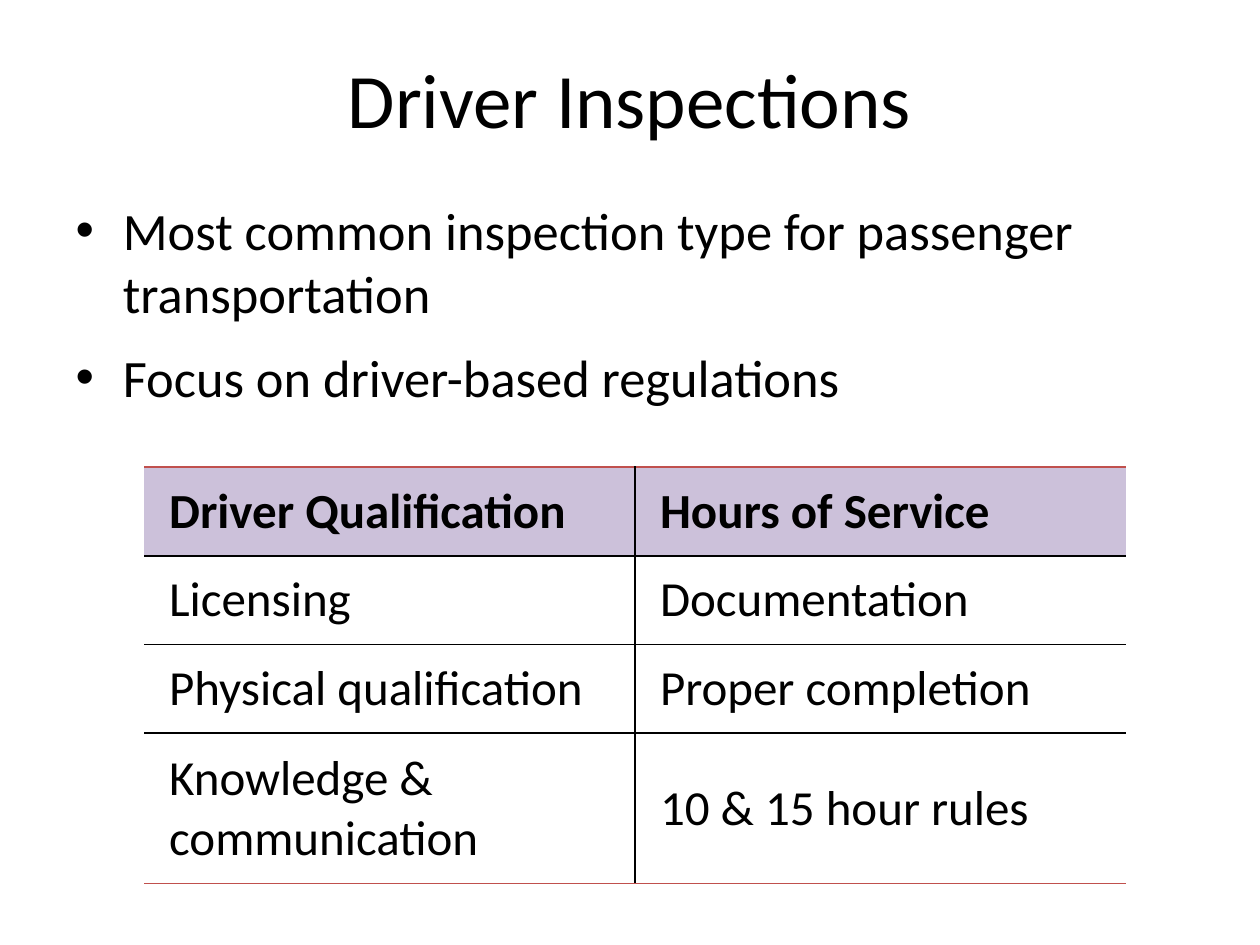
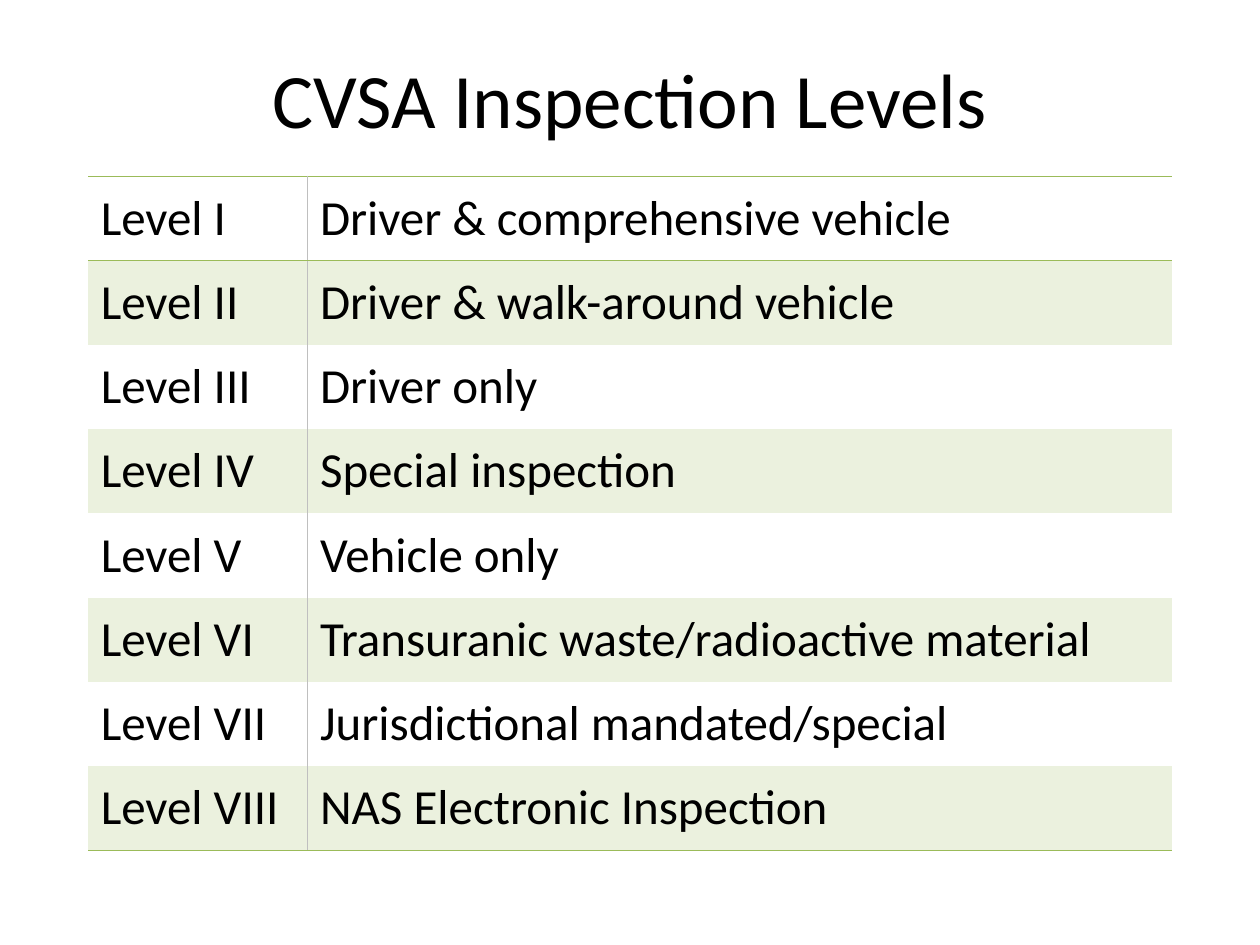
from dataclasses import dataclass

from lxml import etree
from pptx import Presentation
from pptx.dml.color import RGBColor
from pptx.enum.text import MSO_ANCHOR, MSO_AUTO_SIZE, PP_ALIGN
from pptx.oxml.ns import qn
from pptx.slide import Slide
from pptx.table import _Cell
from pptx.text.text import _Paragraph
from pptx.util import Pt

MIDDLE = MSO_ANCHOR.MIDDLE
TOP = MSO_ANCHOR.TOP
CENTER = PP_ALIGN.CENTER
LEFT = PP_ALIGN.LEFT
NO_AUTOFIT = MSO_AUTO_SIZE.NONE

FONT = "Calibri"
BLACK = "000000"
RED = "C0504D"
GREEN = "9BBB59"
GRAY = "BFBFBF"
LILAC = "CCC1DA"
PALE_GREEN = "EBF1DE"

TITLE_AND_BODY, TITLE_ONLY = 1, 5
PLAIN_TABLE_STYLE = "{2D5ABB26-0587-4C30-8999-92F81FD0307C}"
TITLE_BOX = (36, 10.8, 648, 90)
BODY_BOX = (36, 109.4, 648, 170.6)
TITLE_SIZE, BODY_SIZE, CELL_SIZE = 44, 30, 28
RULE_WIDTH = 1


@dataclass(frozen=True)
class TableSpec:
    """Row rules and fills run from top to bottom; None leaves one out."""
    left: float
    top: float
    columns: tuple[float, ...]
    row_heights: tuple[float, ...]
    rows: tuple[tuple[str, ...], ...]
    fills: tuple[str | None, ...]
    row_rules: tuple[str | None, ...]
    column_rule: str
    inset_x: float = 7.2
    inset_y: float = 3.6
    bold_header: bool = False


QUALIFICATIONS = TableSpec(
    left=82.3,
    top=266.9,
    columns=(280.5, 280.5),
    row_heights=(50.7, 50.7, 50.7, 86),
    rows=(
        ("Driver Qualification", "Hours of Service"),
        ("Licensing", "Documentation"),
        ("Physical qualification", "Proper completion"),
        ("Knowledge & communication", "10 & 15 hour rules"),
    ),
    fills=(LILAC, None, None, None),
    row_rules=(RED, BLACK, BLACK, BLACK, RED),
    column_rule=BLACK,
    inset_x=14.4,
    inset_y=7.2,
    bold_header=True,
)

LEVELS = TableSpec(
    left=50.4,
    top=100.8,
    columns=(125.3, 493.9),
    row_heights=(48.15,) * 8,
    rows=(
        ("Level I", "Driver & comprehensive vehicle"),
        ("Level II", "Driver & walk-around vehicle"),
        ("Level III", "Driver only"),
        ("Level IV", "Special inspection"),
        ("Level V", "Vehicle only"),
        ("Level VI", "Transuranic waste/radioactive material"),
        ("Level VII", "Jurisdictional mandated/special"),
        ("Level VIII", "NAS Electronic Inspection"),
    ),
    fills=(None, PALE_GREEN) * 4,
    row_rules=(GREEN, GREEN, *(None,) * 6, GREEN),
    column_rule=GRAY,
)


def color(value: str) -> RGBColor:
    return RGBColor.from_string(value)


def set_all(target: object, values: dict) -> None:
    for name, value in values.items():
        setattr(target, name, value)


def write(para: _Paragraph, text: str, size: float, bold: bool = False) -> None:
    span = para.add_run()
    span.text = text
    set_all(span.font, {"name": FONT, "size": Pt(size), "bold": bold})
    span.font.color.rgb = color(BLACK)


def fill_placeholder(box, place: tuple, lines: tuple[str, ...], size: float,
                     frame_format: dict, para_format: dict) -> None:
    """Move a placeholder and give it one paragraph per line."""
    set_all(box, dict(zip(("left", "top", "width", "height"), map(Pt, place))))
    frame = box.text_frame
    set_all(frame, {"word_wrap": True, "auto_size": NO_AUTOFIT, **frame_format})
    for index, line in enumerate(lines):
        para = frame.add_paragraph() if index else frame.paragraphs[0]
        set_all(para, para_format)
        write(para, line, size)


def add_titled_slide(deck, layout: int, title: str) -> Slide:
    page = deck.slides.add_slide(deck.slide_layouts[layout])
    fill_placeholder(page.shapes.title, TITLE_BOX, (title,), TITLE_SIZE,
                     {"vertical_anchor": MIDDLE}, {"alignment": CENTER})
    return page


def draw_borders(cell: _Cell, borders: dict[str, str | None]) -> None:
    """Borders are keyed lnL, lnR, lnT, lnB, and must precede the cell fill."""
    properties = cell._tc.get_or_add_tcPr()
    for index, (side, value) in enumerate(borders.items()):
        line = etree.Element(qn(f"a:{side}"), w=str(Pt(RULE_WIDTH)))
        if value:
            solid = etree.SubElement(line, qn("a:solidFill"))
            etree.SubElement(solid, qn("a:srgbClr"), val=value)
        else:
            etree.SubElement(line, qn("a:noFill"))
        properties.insert(index, line)


def add_ruled_table(page: Slide, spec: TableSpec) -> None:
    holder = page.shapes.add_table(
        len(spec.rows), len(spec.columns), Pt(spec.left), Pt(spec.top),
        Pt(sum(spec.columns)), Pt(sum(spec.row_heights)))
    holder.element.find(f".//{qn('a:tableStyleId')}").text = PLAIN_TABLE_STYLE
    table = holder.table
    set_all(table, {"first_row": spec.bold_header, "horz_banding": False})
    for column, width in zip(table.columns, spec.columns):
        column.width = Pt(width)
    cell_format = {
        "margin_left": Pt(spec.inset_x), "margin_right": Pt(spec.inset_x),
        "margin_top": Pt(spec.inset_y), "margin_bottom": Pt(spec.inset_y),
        "vertical_anchor": MIDDLE,
    }
    last_column = len(spec.columns) - 1
    for row, texts in enumerate(spec.rows):
        table.rows[row].height = Pt(spec.row_heights[row])
        for column, text in enumerate(texts):
            cell = table.cell(row, column)
            set_all(cell, cell_format)
            write(cell.text_frame.paragraphs[0], text, CELL_SIZE,
                  spec.bold_header and row == 0)
            if spec.fills[row]:
                cell.fill.solid()
                cell.fill.fore_color.rgb = color(spec.fills[row])
            else:
                cell.fill.background()
            draw_borders(cell, {
                "lnL": spec.column_rule if column > 0 else None,
                "lnR": spec.column_rule if column < last_column else None,
                "lnT": spec.row_rules[row],
                "lnB": spec.row_rules[row + 1],
            })


def main() -> None:
    deck = Presentation()
    set_all(deck, {"slide_width": Pt(720), "slide_height": Pt(540)})

    page = add_titled_slide(deck, TITLE_AND_BODY, "Driver Inspections")
    fill_placeholder(
        page.placeholders[1], BODY_BOX,
        ("Most common inspection type for passenger transportation",
         "Focus on driver-based regulations"),
        BODY_SIZE, {"vertical_anchor": TOP},
        {"alignment": LEFT, "space_before": Pt(0), "space_after": Pt(12)})
    add_ruled_table(page, QUALIFICATIONS)

    page = add_titled_slide(deck, TITLE_ONLY, "CVSA Inspection Levels")
    add_ruled_table(page, LEVELS)

    deck.save("out.pptx")


if __name__ == "__main__":
    main()
